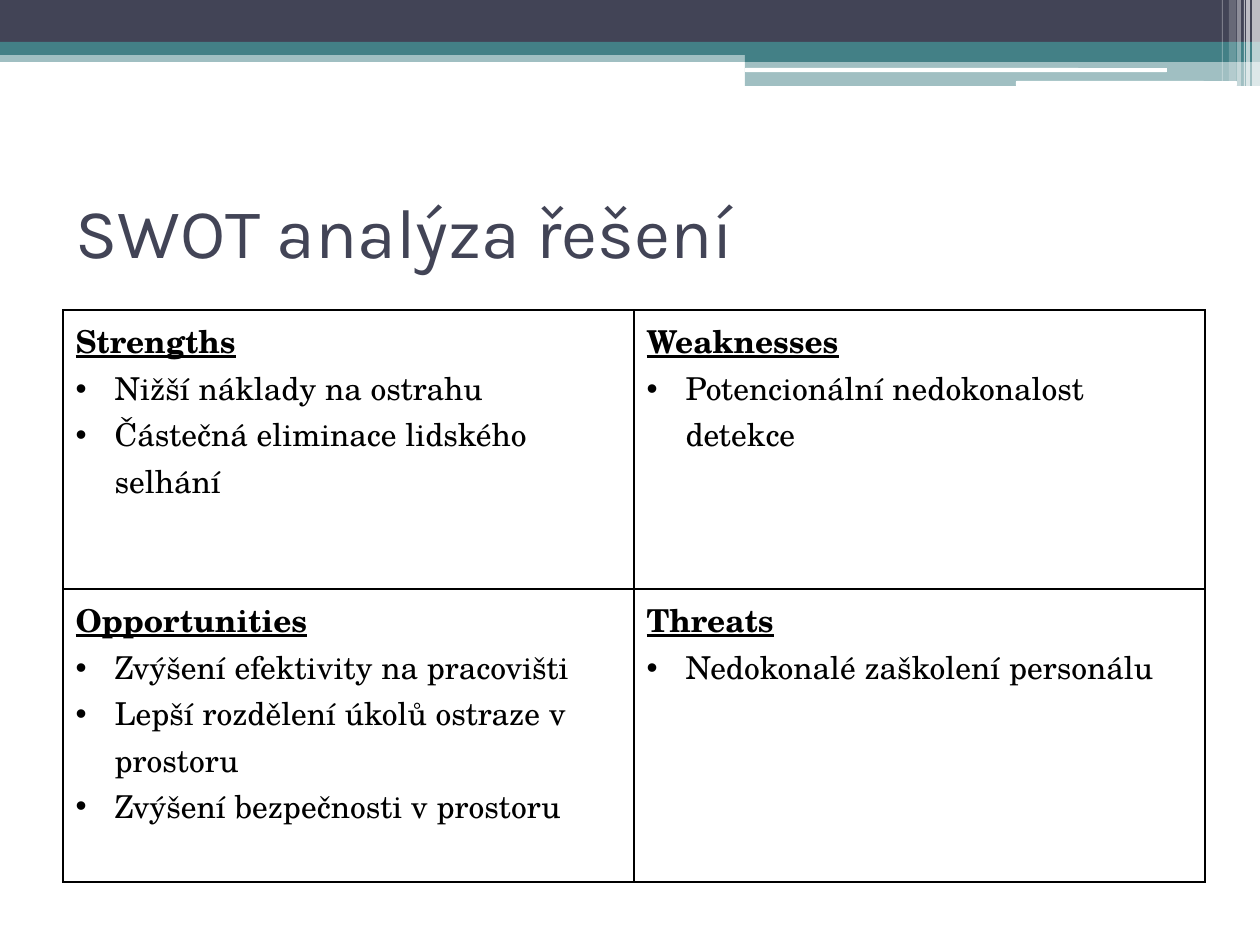
from lxml import etree
from pptx import Presentation
from pptx.dml.color import RGBColor
from pptx.enum.shapes import MSO_SHAPE
from pptx.enum.text import MSO_ANCHOR
from pptx.oxml.ns import qn
from pptx.util import Pt

PX = 914400 / 126
RECT = MSO_SHAPE.RECTANGLE
ROUND = MSO_SHAPE.ROUNDED_RECTANGLE
MIDDLE = MSO_ANCHOR.MIDDLE
NAVY = RGBColor(0x42, 0x44, 0x56)
TEAL = RGBColor(0x43, 0x80, 0x86)
WHITE = RGBColor(0xFF, 0xFF, 0xFF)
BLACK = RGBColor(0x00, 0x00, 0x00)
TITLE_FONT = "Karla"
BODY_FONT = "TeX Gyre Schola"
INDENT = 39


def emu(px):
    return round(px * PX)


def add_span(para, text, font, size, color):
    span = para.add_run()
    span.text = text
    span.font.name = font
    span.font.size = Pt(size)
    span.font.color.rgb = color
    return span


deck = Presentation()
deck.slide_width = emu(1260)
deck.slide_height = emu(945)
page = deck.slides.add_slide(deck.slide_layouts[6])

banner = [
    (RECT, 0, 50, 1260, 12, TEAL, 50),
    (RECT, 0, 0, 1260, 43, NAVY, 100),
    (RECT, 0, 42, 1260, 13, TEAL, 100),
    (RECT, 745, 49, 515, 13, TEAL, 100),
    (RECT, 745, 62, 515, 24, TEAL, 50),
    (ROUND, 745, 68, 422, 4, WHITE, 100),
    (ROUND, 1016, 81, 221, 5, WHITE, 100),
    (RECT, 1252, 0, 8, 86, WHITE, 65),
    (RECT, 1246, 0, 4, 86, WHITE, 65),
    (RECT, 1244, 0, 1, 86, WHITE, 60),
    (RECT, 1237, 0, 4, 86, WHITE, 40),
    (RECT, 1229, 0, 7, 81, WHITE, 20),
    (RECT, 1222, 0, 1, 81, WHITE, 30),
]
for kind, left, top, width, height, color, opacity in banner:
    bar = page.shapes.add_shape(kind, emu(left), emu(top), emu(width), emu(height))
    bar.shadow.inherit = False
    bar.line.fill.background()
    bar.fill.solid()
    bar.fill.fore_color.rgb = color
    if opacity < 100:
        tint = bar.fill._xPr.find(qn("a:solidFill"))[0]
        etree.SubElement(tint, qn("a:alpha"), val=str(opacity * 1000))

title_box = page.shapes.add_textbox(emu(63), emu(157), emu(1134), emu(148))
title_box.text_frame.word_wrap = True
title_box.text_frame.vertical_anchor = MIDDLE
add_span(title_box.text_frame.paragraphs[0], "SWOT analýza řešení", TITLE_FONT, 40, NAVY)

swot = [
    [
        ("Strengths", ["Nižší náklady na ostrahu", "Částečná eliminace lidského selhání"]),
        ("Weaknesses", ["Potencionální nedokonalost detekce"]),
    ],
    [
        ("Opportunities", [
            "Zvýšení efektivity na pracovišti",
            "Lepší rozdělení úkolů ostraze v prostoru",
            "Zvýšení bezpečnosti v prostoru",
        ]),
        ("Threats", ["Nedokonalé zaškolení personálu"]),
    ],
]
frame = page.shapes.add_table(2, 2, emu(63), emu(310), emu(1142), emu(572))
table = frame.table
table.first_row = False
table.horz_banding = False
for column in table.columns:
    column.width = emu(571)
for row, height in zip(table.rows, (279, 293)):
    row.height = emu(height)

for r, quadrants in enumerate(swot):
    for c, (heading, points) in enumerate(quadrants):
        cell = table.cell(r, c)
        para = cell.text_frame.paragraphs[0]
        span = add_span(para, heading, BODY_FONT, 18, BLACK)
        span.font.bold = True
        span.font.underline = True
        for point in points:
            para = cell.text_frame.add_paragraph()
            props = para._p.get_or_add_pPr()
            props.set("marL", str(emu(INDENT)))
            props.set("indent", str(-emu(INDENT)))
            etree.SubElement(props, qn("a:buFont"), typeface="Arial")
            etree.SubElement(props, qn("a:buChar"), char="•")
            add_span(para, point, BODY_FONT, 18, BLACK)
        cell_props = cell._tc.get_or_add_tcPr()
        for side in ("lnL", "lnR", "lnT", "lnB"):
            edge = etree.SubElement(cell_props, qn(f"a:{side}"), w=str(Pt(1)))
            paint = etree.SubElement(edge, qn("a:solidFill"))
            etree.SubElement(paint, qn("a:srgbClr"), val=str(BLACK))
        cell.fill.background()

deck.save("out.pptx")
